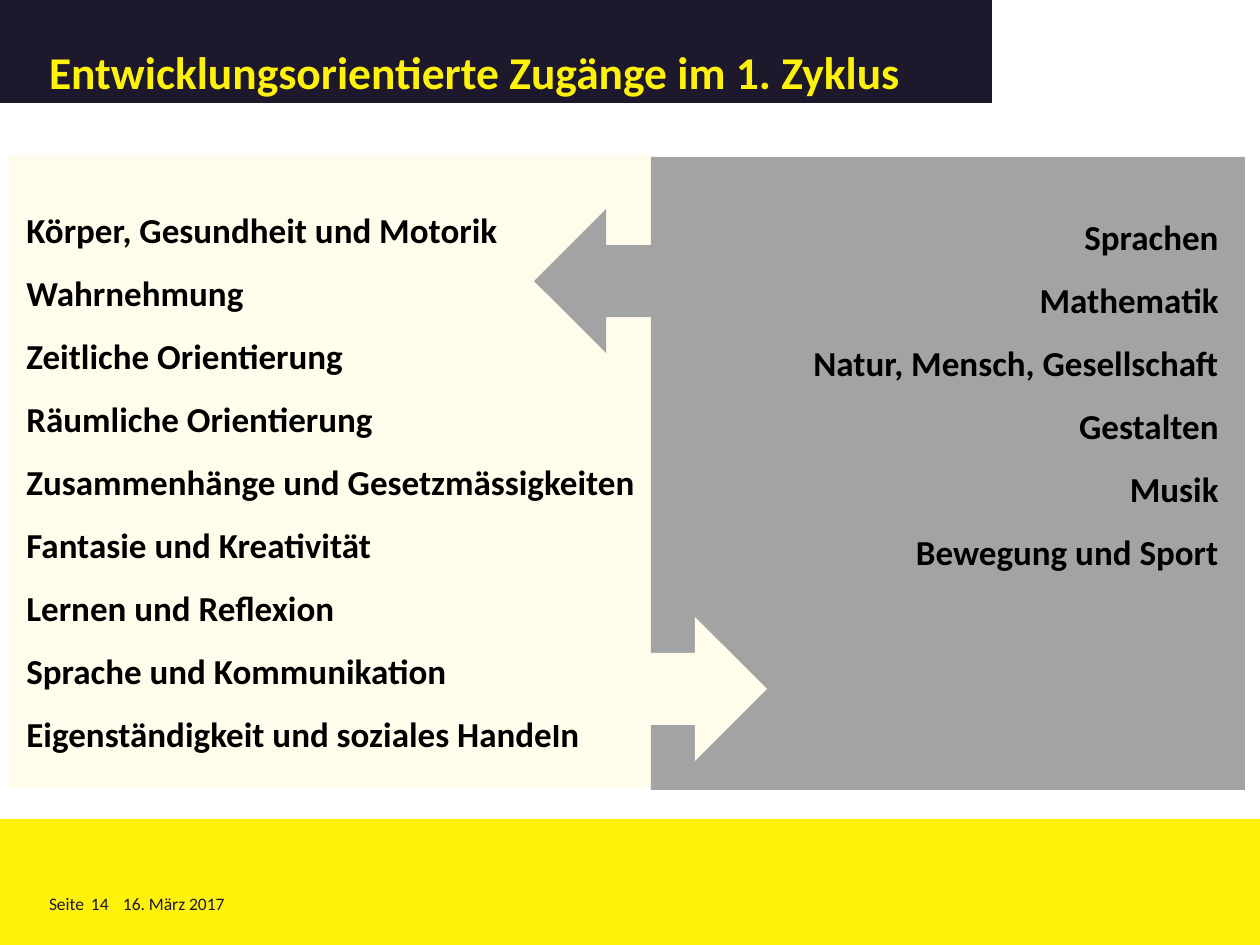
import pptx
import pptx.util
import pptx.dml.color
import pptx.enum.shapes
import pptx.enum.text

PX = 914400 / 126
FONT = "Calibri"
COLORS = {
    "yellow": "FEF20A",
    "navy": "1D182C",
    "cream": "FFFCEC",
    "gray": "A3A3A3",
    "black": "000000",
}
DEVELOPMENT_AREAS = [
    "Körper, Gesundheit und Motorik",
    "Wahrnehmung",
    "Zeitliche Orientierung",
    "Räumliche Orientierung",
    "Zusammenhänge und Gesetzmässigkeiten",
    "Fantasie und Kreativität",
    "Lernen und Reflexion",
    "Sprache und Kommunikation",
    "Eigenständigkeit und soziales Handeln",
]
SUBJECTS = [
    "Sprachen",
    "Mathematik",
    "Natur, Mensch, Gesellschaft",
    "Gestalten",
    "Musik",
    "Bewegung und Sport",
]
FOOTER = [("Seite", 49, 44), ("16. März 2017", 123, 287), ("14", 91, 38)]
SHAPES = pptx.enum.shapes.MSO_SHAPE
ALIGN = pptx.enum.text.PP_ALIGN


def emu(px):
    return pptx.util.Emu(round(px * PX))


def rgb(color):
    return pptx.dml.color.RGBColor.from_string(COLORS[color])


def fill_solid(shape, color):
    shape.fill.solid()
    shape.fill.fore_color.rgb = rgb(color)
    shape.line.fill.background()


def set_margins(frame, left, top, right, bottom):
    frame.margin_left, frame.margin_top = emu(left), emu(top)
    frame.margin_right, frame.margin_bottom = emu(right), emu(bottom)


def format_runs(paragraph, size, color, bold=False):
    for run in paragraph.runs:
        run.font.name = FONT
        run.font.size = pptx.util.Pt(size)
        run.font.bold = bold
        run.font.color.rgb = rgb(color)


def add_block(slide, kind, box, color, rotation=0):
    block = slide.shapes.add_shape(kind, *map(emu, box))
    block.shadow.inherit = False
    block.rotation = rotation
    fill_solid(block, color)


def add_footer_text(slide, text, left, width):
    footer = slide.shapes.add_textbox(*map(emu, (left, 893, width, 21)))
    frame = footer.text_frame
    frame.word_wrap = True
    set_margins(frame, 0, 0, 0, 0)
    frame.text = text
    format_runs(frame.paragraphs[0], 10, "navy")


def add_topics(slide, topics, box, alignment):
    frame = slide.shapes.add_textbox(*map(emu, box)).text_frame
    frame.word_wrap = True
    frame.text = "\n".join(topics)
    for index, paragraph in enumerate(frame.paragraphs):
        paragraph.alignment = alignment
        paragraph.space_before = pptx.util.Pt(6 if index else 0)
        paragraph.space_after = pptx.util.Pt(6)
        format_runs(paragraph, 20, "black", bold=True)


def set_title(slide, text):
    title = slide.shapes.title
    title.left, title.top, title.width, title.height = map(emu, (0, 0, 992, 103))
    fill_solid(title, "navy")
    frame = title.text_frame
    frame.word_wrap = True
    frame.auto_size = pptx.enum.text.MSO_AUTO_SIZE.NONE
    frame.vertical_anchor = pptx.enum.text.MSO_ANCHOR.BOTTOM
    set_margins(frame, 49, 10, 10, 5)
    frame.text = text
    heading = frame.paragraphs[0]
    heading.alignment = ALIGN.LEFT
    heading.line_spacing = 0.8
    format_runs(heading, 26, "yellow", bold=True)


def main():
    presentation = pptx.Presentation()
    presentation.slide_width = emu(1260)
    presentation.slide_height = emu(945)
    slide = presentation.slides.add_slide(presentation.slide_layouts[5])

    set_title(slide, "Entwicklungsorientierte Zugänge im 1. Zyklus")
    add_block(slide, SHAPES.RECTANGLE, (0, 819, 1260, 126), "yellow")
    for text, left, width in FOOTER:
        add_footer_text(slide, text, left, width)

    add_block(slide, SHAPES.RECTANGLE, (9, 155, 645, 633), "cream")
    add_topics(slide, DEVELOPMENT_AREAS, (14, 202, 656, 596), ALIGN.LEFT)
    add_block(slide, SHAPES.RECTANGLE, (651, 157, 594, 633), "gray")
    add_block(slide, SHAPES.RIGHT_ARROW, (534, 617, 233, 144), "cream")
    add_topics(slide, SUBJECTS, (786, 209, 445, 373), ALIGN.RIGHT)
    add_block(slide, SHAPES.RIGHT_ARROW, (534, 209, 233, 144), "gray", rotation=180)

    presentation.save("out.pptx")


if __name__ == "__main__":
    main()
